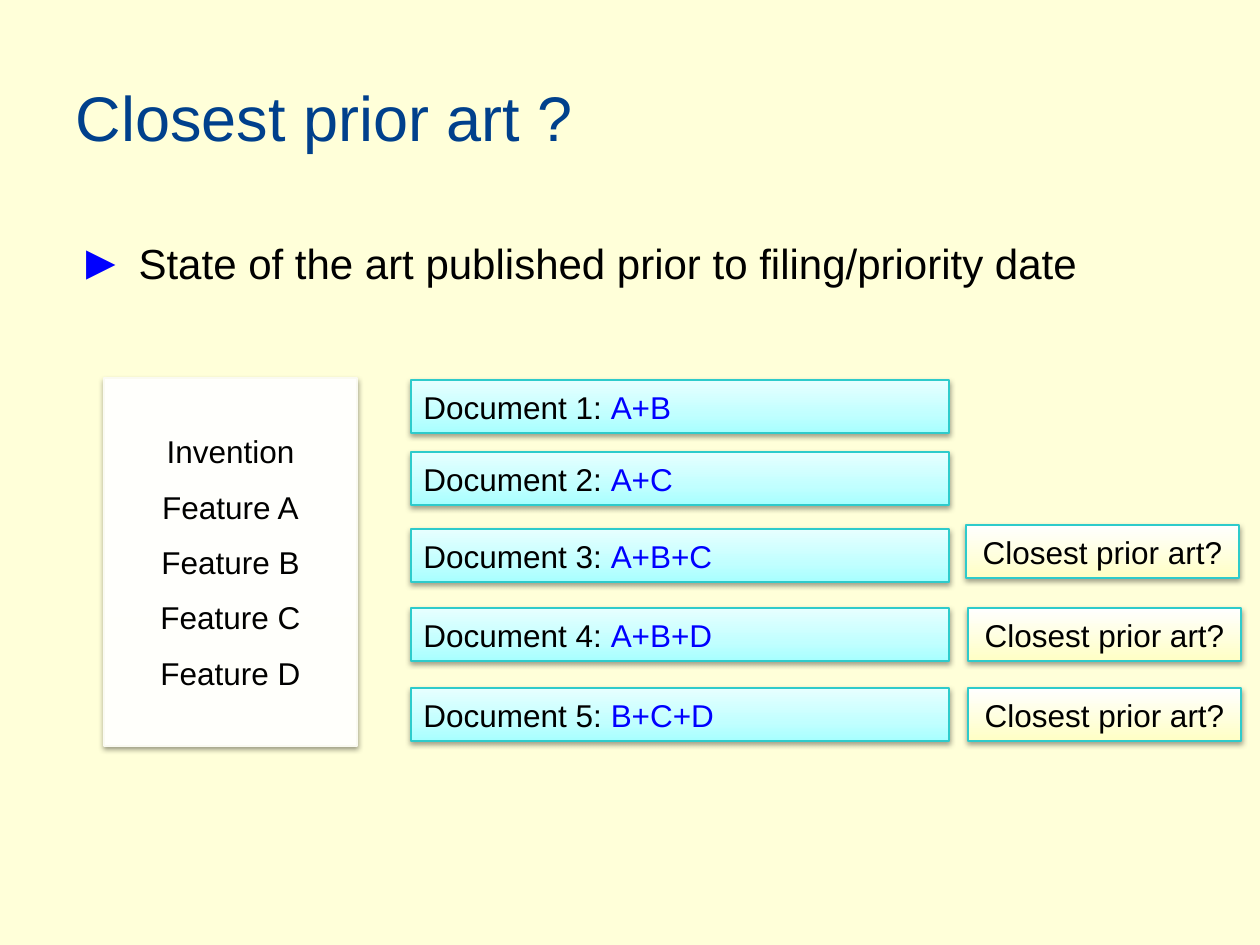
from copy import deepcopy

from pptx import Presentation
from pptx.dml.color import RGBColor
from pptx.enum.shapes import MSO_SHAPE as Shape
from pptx.enum.text import MSO_ANCHOR as Anchor, PP_ALIGN as Align
from pptx.oxml import parse_xml
from pptx.oxml.ns import nsdecls, qn
from pptx.util import Pt

PX = 914400 / 126
FONT = "Arial"
BLACK, BLUE, NAVY = "000000", "0000FF", "00408C"

TITLE = "Closest prior art ?"
STATEMENT = [("► ", 28, BLUE),
             ("State of the art published prior to filing/priority date", 24, BLACK)]
INVENTION = ["Invention", "Feature A", "Feature B", "Feature C", "Feature D"]
QUESTION = "Closest prior art?"
# name, features, top of the bar, left and top of the question (if any)
DOCUMENTS = [
    ("Document 1: ", "A+B", 380, None),
    ("Document 2: ", "A+C", 452, None),
    ("Document 3: ", "A+B+C", 529, (966, 525)),
    ("Document 4: ", "A+B+D", 608, (968, 608)),
    ("Document 5: ", "B+C+D", 688, (968, 688)),
]
BAR_LEFT, BAR_WIDTH, QUESTION_WIDTH, ROW_HEIGHT = 411, 538, 273, 53

# line colour, gradient stops from bottom to top
WHITE_STYLE = ("FAFAF1", [(0, "FFFFFB"), (0.35, "FFFFFC"), (1, "FFFFFE")])
CYAN_STYLE = ("2ECBCB", [(0, "A7FFFF"), (0.35, "C1FFFF"), (1, "E7FFFF")])
YELLOW_STYLE = ("2ECBCB", [(0, "FFFFC5"), (1, "FFFFFF")])

SHADOW = (f'<a:outerShdw {nsdecls("a")} blurRad="40000" dist="20000" dir="5400000" '
          'rotWithShape="0"><a:srgbClr val="000000"><a:alpha val="38000"/>'
          '</a:srgbClr></a:outerShdw>')


def color(value):
    return RGBColor.from_string(value)


def place(shape, left, top, width, height):
    shape.left, shape.top = round(left * PX), round(top * PX)
    shape.width, shape.height = round(width * PX), round(height * PX)


def write(para, spans, align=Align.LEFT):
    """Fill a paragraph with (text, size, colour) spans."""
    para.alignment = align
    for text, size, value in spans:
        span = para.add_run()
        span.text = text
        span.font.name, span.font.size = FONT, Pt(size)
        span.font.color.rgb = color(value)


def paint_gradient(shape, stops):
    shape.fill.gradient()
    shape.fill.gradient_angle = 90
    stop_list = shape.element.spPr.find(".//" + qn("a:gsLst"))
    for _ in stops[2:]:
        stop_list.append(deepcopy(stop_list[-1]))
    for stop, (position, value) in zip(shape.fill.gradient_stops, stops):
        stop.position = position
        stop.color.rgb = color(value)


def add_box(page, bounds, style, paragraphs, align=Align.CENTER):
    line_color, stops = style
    box = page.shapes.add_shape(Shape.RECTANGLE, 0, 0, 0, 0)
    place(box, *bounds)
    paint_gradient(box, stops)
    box.line.color.rgb = color(line_color)
    box.line.width = Pt(0.75)
    box.shadow.inherit = False
    box.element.spPr.find(qn("a:effectLst")).append(parse_xml(SHADOW))
    frame = box.text_frame
    frame.word_wrap = True
    frame.vertical_anchor = Anchor.MIDDLE
    for index, spans in enumerate(paragraphs):
        para = frame.add_paragraph() if index else frame.paragraphs[0]
        para.space_before = Pt(10 if index else 0)
        write(para, spans, align)


def main():
    deck = Presentation()
    deck.slide_width, deck.slide_height = round(1260 * PX), round(945 * PX)
    page = deck.slides.add_slide(deck.slide_layouts[1])
    page.background.fill.solid()
    page.background.fill.fore_color.rgb = color("FFFFD9")

    title, body = page.placeholders
    place(title, 63, 38, 1134, 157)
    title.text_frame.vertical_anchor = Anchor.MIDDLE
    write(title.text_frame.paragraphs[0], [(TITLE, 36, NAVY)])

    place(body, 64, 220, 1196, 600)
    body.text_frame.margin_top = round(10 * PX)
    para = body.text_frame.paragraphs[0]
    properties = para._p.get_or_add_pPr()
    properties.set("marL", "0")
    properties.set("indent", "0")
    properties.append(parse_xml(f'<a:buNone {nsdecls("a")}/>'))
    para.space_before = Pt(0)
    write(para, STATEMENT)

    add_box(page, (104, 378, 253, 368), WHITE_STYLE,
            [[(line, 18, BLACK)] for line in INVENTION])
    for name, features, top, question in DOCUMENTS:
        add_box(page, (BAR_LEFT, top, BAR_WIDTH, ROW_HEIGHT), CYAN_STYLE,
                [[(name, 18, BLACK), (features, 18, BLUE)]], Align.LEFT)
        if question:
            add_box(page, (*question, QUESTION_WIDTH, ROW_HEIGHT), YELLOW_STYLE,
                    [[(QUESTION, 18, BLACK)]])
    deck.save("out.pptx")


if __name__ == "__main__":
    main()
